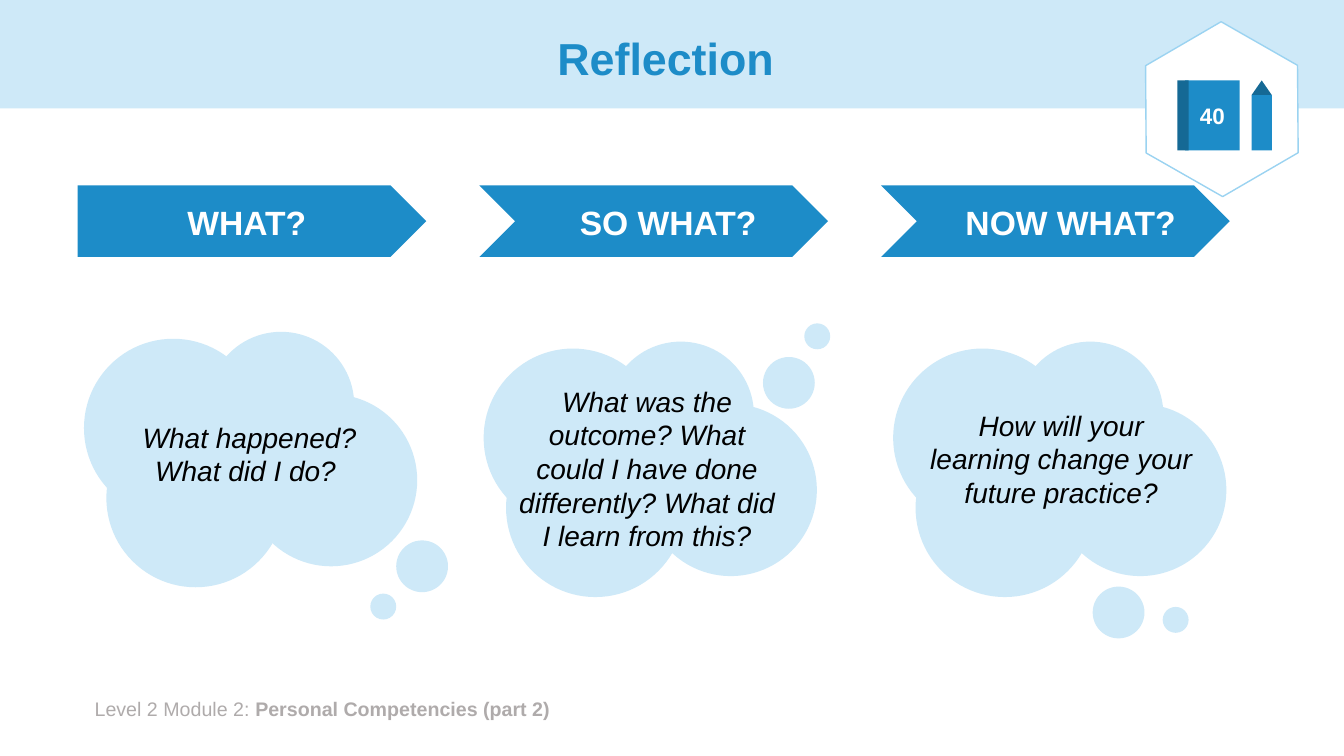
from pptx import Presentation
from pptx.dml.color import RGBColor
from pptx.enum.shapes import MSO_SHAPE
from pptx.enum.text import MSO_ANCHOR, PP_ALIGN
from pptx.util import Pt

RECTANGLE, OVAL = MSO_SHAPE.RECTANGLE, MSO_SHAPE.OVAL
PENTAGON, CHEVRON = MSO_SHAPE.PENTAGON, MSO_SHAPE.CHEVRON
HEXAGON, TRIANGLE = MSO_SHAPE.HEXAGON, MSO_SHAPE.ISOSCELES_TRIANGLE
MIDDLE, CENTER, LEFT = MSO_ANCHOR.MIDDLE, PP_ALIGN.CENTER, PP_ALIGN.LEFT
FONT = "Arial"
BLUE, DARK_BLUE, PALE_BLUE, OUTLINE_BLUE = "1D8CC8", "156995", "CEE9F8", "9BD3F1"
WHITE, BLACK, GREY = "FFFFFF", "000000", "AFABAB"

PUFFS = [(0, 5, 127.5), (88.5, 0, 104.5), (16, 55, 127.5), (115, 44.5, 123)]
BUBBLE_SIZES = (37, 18.5)
ARROWS = [
    (PENTAGON, "WHAT?", 44.5, 152.5),
    (CHEVRON, "SO WHAT?", 58.5, 152.5),
    (CHEVRON, "NOW WHAT?", 33, 204.5),
]
CLOUDS = [
    ((60, 237), [(223, 149), (204.5, 187)], (29, 59.5, 178.5, 55.5),
     "What happened? What did I do? "),
    ((345.5, 244), [(199.5, 11), (229, -13)], (13, 27, 207.5, 128),
     "What was the outcome? What could I have done differently? What did I learn from this?"),
    ((638, 244), [(142.5, 175), (192.5, 189.5)], (18, 44, 204, 80),
     "How will your learning change your future practice?"),
]


def color(value):
    """Return the colour for a hex string."""
    return RGBColor.from_string(value)


def format_span(span, size, ink, bold=False, italic=False):
    """Set the font of one run."""
    font = span.font
    font.name, font.size, font.bold, font.italic = FONT, Pt(size), bold, italic
    font.color.rgb = color(ink)


def add_block(shapes, kind, left, top, width, height, fill, line=None):
    """Add a flat filled shape with an optional outline."""
    block = shapes.add_shape(kind, Pt(left), Pt(top), Pt(width), Pt(height))
    block.shadow.inherit = False
    block.fill.solid()
    block.fill.fore_color.rgb = color(fill)
    if line:
        block.line.color.rgb = color(line)
        block.line.width = Pt(1)
    else:
        block.line.fill.background()
    return block


def add_label(shapes, left, top, width, height, text, size, ink, align=CENTER, **style):
    """Add a wrapping text box holding one paragraph."""
    box = shapes.add_textbox(Pt(left), Pt(top), Pt(width), Pt(height))
    box.text_frame.word_wrap = True
    para = box.text_frame.paragraphs[0]
    para.text = text
    para.alignment = align
    format_span(para.runs[0], size, ink, **style)
    return para


def add_header(page, width, height):
    """Add the pale band and place the title on it."""
    add_block(page.shapes, RECTANGLE, 0, 0, width, height, PALE_BLUE)
    title = page.shapes.title
    title.element.getparent().append(title.element)
    title.left, title.top, title.width, title.height = Pt(66), Pt(9.5), Pt(828), Pt(68.5)
    frame = title.text_frame
    frame.text = "Reflection "
    frame.vertical_anchor = MIDDLE
    para = frame.paragraphs[0]
    para.alignment, para.line_spacing = CENTER, 0.9
    format_span(para.runs[0], 32, BLUE, bold=True)


def add_arrows(page, left, top, pitch):
    """Add the row of question arrows with their labels."""
    for index, (kind, text, inset, width) in enumerate(ARROWS):
        start = left + index * pitch
        add_block(page.shapes, kind, start, top, 249, 51, BLUE)
        add_label(page.shapes, start + inset, top + 8, width, 36, text, 24, WHITE, bold=True)


def add_cloud(page, left, top, bubbles, text_box, text):
    """Add a thought cloud with its two bubbles and its question."""
    cloud = page.shapes.add_group_shape()
    trail = [(x, y, size) for (x, y), size in zip(bubbles, BUBBLE_SIZES)]
    for x, y, size in PUFFS + trail:
        add_block(cloud.shapes, OVAL, left + x, top + y, size, size, PALE_BLUE)
    x, y, width, height = text_box
    add_label(page.shapes, left + x, top + y, width, height, text, 20, BLACK, italic=True)


def add_badge(page, left, top):
    """Add the hexagon badge with the numbered notebook and pencil."""
    badge = page.shapes.add_group_shape().shapes
    hexagon = add_block(badge, HEXAGON, left, top, 125.5, 108, WHITE, OUTLINE_BLUE)
    hexagon.adjustments[0] = 0.29
    hexagon.rotation = 29.7
    book_top = top + 33.5
    book = add_block(badge, RECTANGLE, left + 36.5, book_top, 39, 50, BLUE)
    frame = book.text_frame
    frame.text = "40"
    frame.word_wrap = False
    frame.vertical_anchor = MIDDLE
    frame.paragraphs[0].alignment = CENTER
    format_span(frame.paragraphs[0].runs[0], 16, WHITE, bold=True)
    add_block(badge, RECTANGLE, left + 31, book_top, 8, 50, DARK_BLUE)
    add_block(badge, TRIANGLE, left + 84, book_top, 14.5, 10.5, DARK_BLUE)
    add_block(badge, RECTANGLE, left + 84, book_top + 10.5, 14.5, 39.5, BLUE)


def add_footer(page, left, top):
    """Add the module line at the bottom of the page."""
    para = add_label(page.shapes, left, top, 616, 24, "Level 2 Module 2: ", 14, GREY, LEFT)
    span = para.add_run()
    span.text = "Personal Competencies (part 2)"
    format_span(span, 14, GREY, bold=True)


def main():
    """Build the reflection page and save the deck."""
    deck = Presentation()
    deck.slide_width, deck.slide_height = Pt(960), Pt(540)
    page = deck.slides.add_slide(deck.slide_layouts[5])
    add_header(page, 960, 77.5)
    add_footer(page, 60.5, 494.5)
    add_arrows(page, 55.5, 132.5, 287)
    for (left, top), bubbles, text_box, text in CLOUDS:
        add_cloud(page, left, top, bubbles, text_box, text)
    add_badge(page, 810, 24)
    deck.save("out.pptx")


if __name__ == "__main__":
    main()
